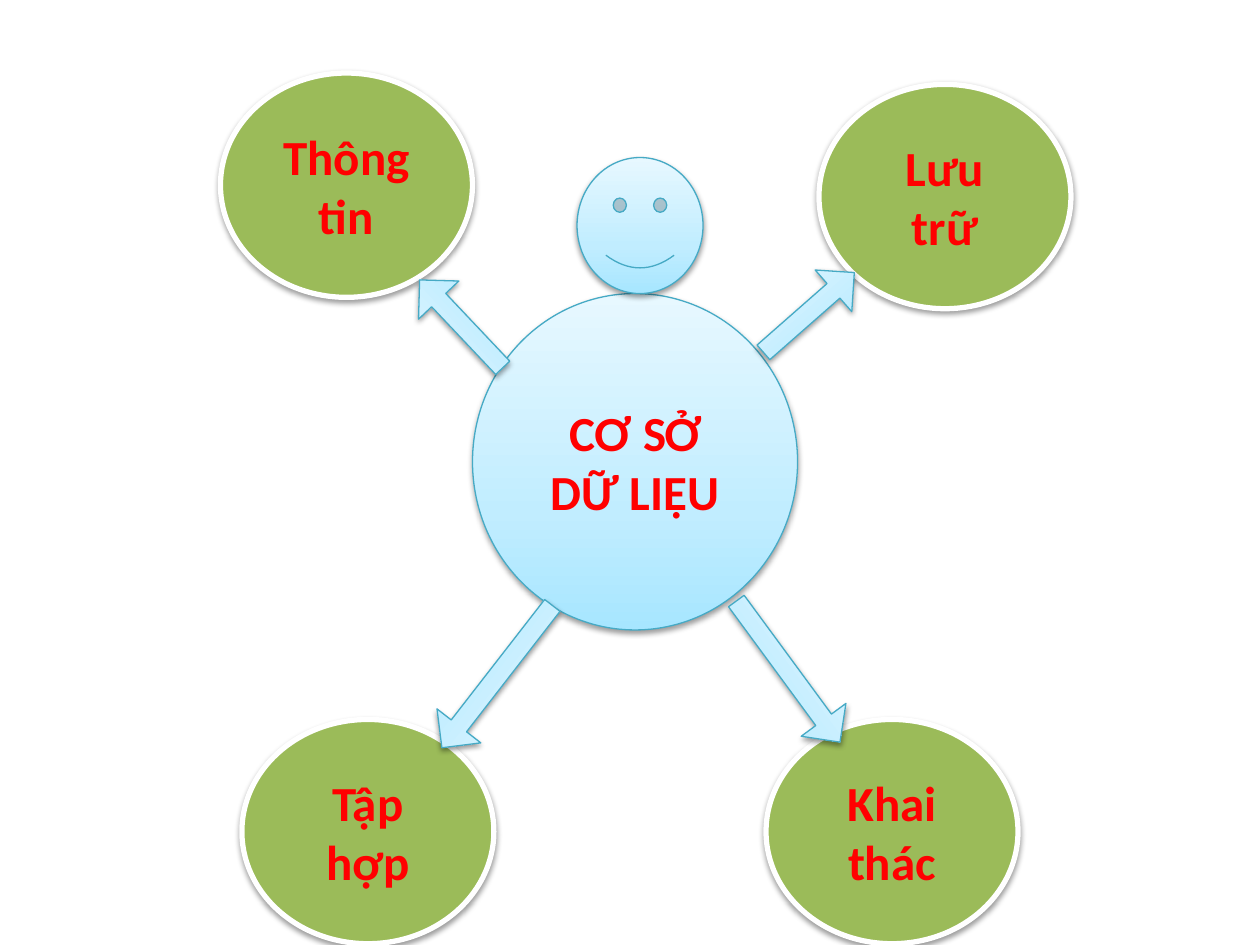
from copy import deepcopy

from pptx import Presentation
from pptx.dml.color import RGBColor
from pptx.enum.shapes import MSO_SHAPE
from pptx.enum.text import MSO_ANCHOR, PP_ALIGN
from pptx.oxml import parse_xml
from pptx.oxml.ns import nsdecls, qn
from pptx.util import Inches, Pt

OVAL = MSO_SHAPE.OVAL
ARROW = MSO_SHAPE.RIGHT_ARROW
SMILEY = MSO_SHAPE.SMILEY_FACE
MIDDLE = MSO_ANCHOR.MIDDLE
CENTER = PP_ALIGN.CENTER

COLORS = {
    "green": "9BBB59",
    "white": "FFFFFF",
    "outline": "46AAC5",
    "text": "FF0000",
    "shadow": "000000",
}
BLUE_STOPS = [(0, "A7E6FF"), (0.35, "C1EDFF"), (1, "E7F8FF")]

deck = Presentation()
deck.slide_width = Inches(10)
deck.slide_height = Inches(7.5)
page = deck.slides.add_slide(deck.slide_layouts[6])


def add_figure(kind, left, top, width, height, blue=True):
    """Add a shadowed shape, either blue gradient or plain green."""
    shape = page.shapes.add_shape(
        kind, Inches(left), Inches(top), Inches(width), Inches(height))
    fill = shape.fill
    if blue:
        fill.gradient()
        fill.gradient_angle = 90
        stop_list = shape._element.spPr.find(".//" + qn("a:gsLst"))
        stop_list.append(deepcopy(stop_list[0]))
        for stop, (position, color) in zip(fill.gradient_stops, BLUE_STOPS):
            stop.position = position
            stop.color.rgb = RGBColor.from_string(color)
    else:
        fill.solid()
        fill.fore_color.rgb = RGBColor.from_string(COLORS["green"])
    line_color = COLORS["outline" if blue else "white"]
    shape.line.color.rgb = RGBColor.from_string(line_color)
    shape.line.width = Pt(0.75 if blue else 3)

    shape.shadow.inherit = False
    effects = shape._element.spPr.find(qn("a:effectLst"))
    effects.append(parse_xml(
        f'<a:outerShdw {nsdecls("a")} blurRad="40000" dist="20000" '
        f'dir="5400000" rotWithShape="0"><a:srgbClr val="{COLORS["shadow"]}">'
        '<a:alpha val="38000"/></a:srgbClr></a:outerShdw>'))
    return shape


def add_label(shape, text):
    """Write a centred bold label inside a shape."""
    frame = shape.text_frame
    frame.word_wrap = True
    frame.vertical_anchor = MIDDLE
    para = frame.paragraphs[0]
    para.text = text
    para.alignment = CENTER
    para.font.name = "Calibri"
    para.font.size = Pt(28)
    para.font.bold = True
    para.font.color.rgb = RGBColor.from_string(COLORS["text"])


# Body of the figure
add_label(add_figure(OVAL, 3.75, 2.33, 2.58, 2.67), "CƠ SỞ DỮ LIỆU")

# Green ovals at the hands and feet
for text, left, top in [
    ("Tập hợp", 1.92, 5.71),
    ("Khai thác", 6.08, 5.71),
    ("Thông tin", 1.75, 0.58),
    ("Lưu trữ", 6.5, 0.67),
]:
    add_label(add_figure(OVAL, left, top, 2, 1.78, blue=False), text)

# Head
add_figure(SMILEY, 4.58, 1.25, 1, 1.08)

# Arrows as arms and legs
for left, top, length, angle in [
    (5.56, 5.11, 1.39, 53.7),
    (3.18, 2.35, 0.96, 226.6),
    (3.23, 5.15, 1.43, 127.8),
    (5.94, 2.26, 0.96, 318.7),
]:
    arrow = add_figure(ARROW, left, top, length, 0.44)
    arrow.adjustments[0] = 0.35
    arrow.rotation = angle

deck.save("out.pptx")
